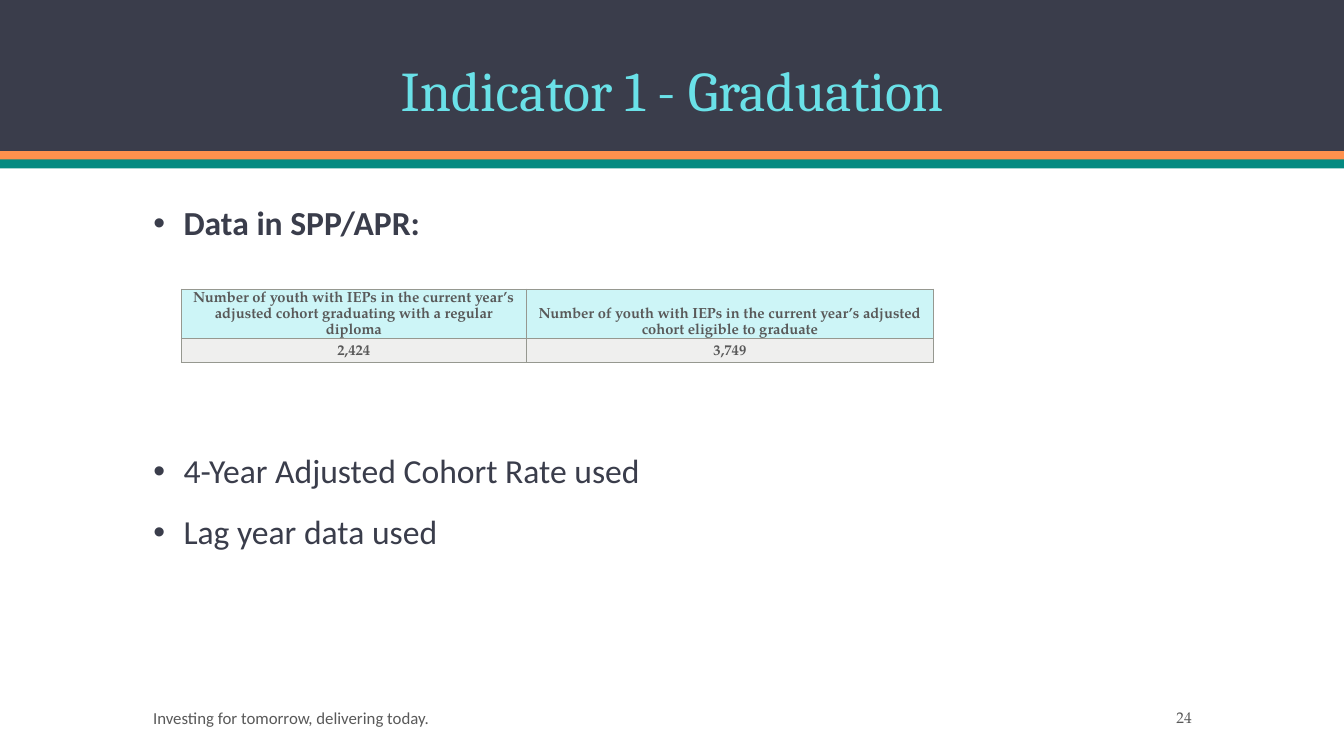
from dataclasses import dataclass

from lxml import etree
from pptx import Presentation
from pptx.dml.color import RGBColor
from pptx.enum.shapes import MSO_SHAPE
from pptx.enum.text import MSO_ANCHOR, MSO_AUTO_SIZE, PP_ALIGN
from pptx.oxml.ns import qn
from pptx.util import Inches, Pt


@dataclass(frozen=True)
class Theme:
    navy: str = "3A3D4B"
    orange: str = "FF914D"
    teal: str = "048A81"
    aqua: str = "6AE1E8"
    gray: str = "595959"
    header_fill: str = "CDF5F7"
    value_fill: str = "EFEFEE"
    border: str = "969890"
    title_font: str = "Cambria"
    body_font: str = "Calibri"
    table_font: str = "TeX Gyre Pagella"
    title_size: float = 40
    body_size: float = 24
    footer_size: float = 12
    number_size: float = 11
    table_size: float = 10.5


theme = Theme()


def write(para, text, font, size, color, bold=False, **layout):
    """Add one formatted run and set the paragraph's layout values."""
    span = para.add_run()
    span.text = text
    span.font.color.rgb = RGBColor.from_string(color)
    for name, value in {"name": font, "size": Pt(size), "bold": bold}.items():
        setattr(span.font, name, value)
    for name, value in layout.items():
        setattr(para, name, value)


def place(box, left, top, width, height, anchor):
    """Position a text shape and fix its frame."""
    bounds = {"left": left, "top": top, "width": width, "height": height}
    for name, value in bounds.items():
        setattr(box, name, Inches(value))
    frame_format = {"word_wrap": True, "auto_size": MSO_AUTO_SIZE.NONE,
                    "vertical_anchor": anchor}
    for name, value in frame_format.items():
        setattr(box.text_frame, name, value)


deck = Presentation()
deck.slide_width, deck.slide_height = Inches(13.33), Inches(7.5)
page = deck.slides.add_slide(deck.slide_layouts[1])
title, body = page.placeholders

# Header bands, behind the title
for top, height, color in [(0, 1.5, theme.navy), (1.5, 0.09, theme.orange),
                           (1.58, 0.09, theme.teal)]:
    band = page.shapes.add_shape(MSO_SHAPE.RECTANGLE, 0, Inches(top),
                                 deck.slide_width, Inches(height))
    band.shadow.inherit = False
    band.fill.solid()
    band.fill.fore_color.rgb = RGBColor.from_string(color)
    band.line.fill.background()
    title.element.addprevious(band.element)

# Title
place(title, 0, 0.15, 13.33, 1.13, MSO_ANCHOR.BOTTOM)
write(title.text_frame.paragraphs[0], "Indicator 1 - Graduation",
      theme.title_font, theme.title_size, theme.aqua,
      alignment=PP_ALIGN.CENTER, line_spacing=0.9)

# Bullets, with room for the table after the first one
place(body, 1.42, 2, 10.5, 4.75, MSO_ANCHOR.TOP)
bullets = [("Data in SPP/APR:", True, 18),
           ("4-Year Adjusted Cohort Rate used", False, 151),
           ("Lag year data used", False, 18)]
for index, (text, bold, space) in enumerate(bullets):
    frame = body.text_frame
    para = frame.add_paragraph() if index else frame.paragraphs[0]
    write(para, text, theme.body_font, theme.body_size, theme.navy, bold,
          line_spacing=0.9, space_before=Pt(space))
    properties = para._p.get_or_add_pPr()
    properties.set("marL", str(Inches(0.3)))
    properties.set("indent", str(Inches(-0.3)))
    etree.SubElement(properties, qn("a:buFont"), typeface="Arial")
    etree.SubElement(properties, qn("a:buChar"), char="•")

# Graduation table
rows = [["Number of youth with IEPs in the current year’s adjusted cohort "
         "graduating with a regular diploma",
         "Number of youth with IEPs in the current year’s adjusted cohort "
         "eligible to graduate"],
        ["2,424", "3,749"]]
row_formats = [(0, theme.header_fill, MSO_ANCHOR.BOTTOM, 0),
               (0.24, theme.value_fill, MSO_ANCHOR.MIDDLE, 3)]
table = page.shapes.add_table(2, 2, Inches(1.8), Inches(2.87),
                              Inches(7.46), Inches(0.84)).table
table.first_row = table.horz_banding = False
for column, width in zip(table.columns, (3.42, 4.04)):
    column.width = Inches(width)
for row, texts, (height, fill, anchor, after) in zip(table.rows, rows, row_formats):
    row.height = Inches(height)
    for cell, text in zip(row.cells, texts):
        cell_format = {"margin_left": Inches(0.07), "margin_right": Inches(0.07),
                       "margin_top": 0, "margin_bottom": 0,
                       "vertical_anchor": anchor}
        for name, value in cell_format.items():
            setattr(cell, name, value)
        write(cell.text_frame.paragraphs[0], text, theme.table_font,
              theme.table_size, theme.gray, True, alignment=PP_ALIGN.CENTER,
              line_spacing=1.15, space_before=Pt(3), space_after=Pt(after))
        properties = cell._tc.get_or_add_tcPr()
        for side in ("lnL", "lnR", "lnT", "lnB"):
            line = etree.SubElement(properties, qn(f"a:{side}"), w=str(Pt(1)))
            paint = etree.SubElement(line, qn("a:solidFill"))
            etree.SubElement(paint, qn("a:srgbClr"), val=theme.border)
        cell.fill.solid()
        cell.fill.fore_color.rgb = RGBColor.from_string(fill)

# Footer and slide number
footers = [("Investing for tomorrow, delivering today.", 1.42, 6.83,
            theme.body_font, theme.footer_size, PP_ALIGN.LEFT),
           ("24", 10.42, 1.5, theme.table_font, theme.number_size, PP_ALIGN.RIGHT)]
for text, left, width, font, size, alignment in footers:
    box = page.shapes.add_textbox(0, 0, 0, 0)
    place(box, left, 6.97, width, 0.3, MSO_ANCHOR.MIDDLE)
    write(box.text_frame.paragraphs[0], text, font, size, theme.gray,
          alignment=alignment)

deck.save("out.pptx")
